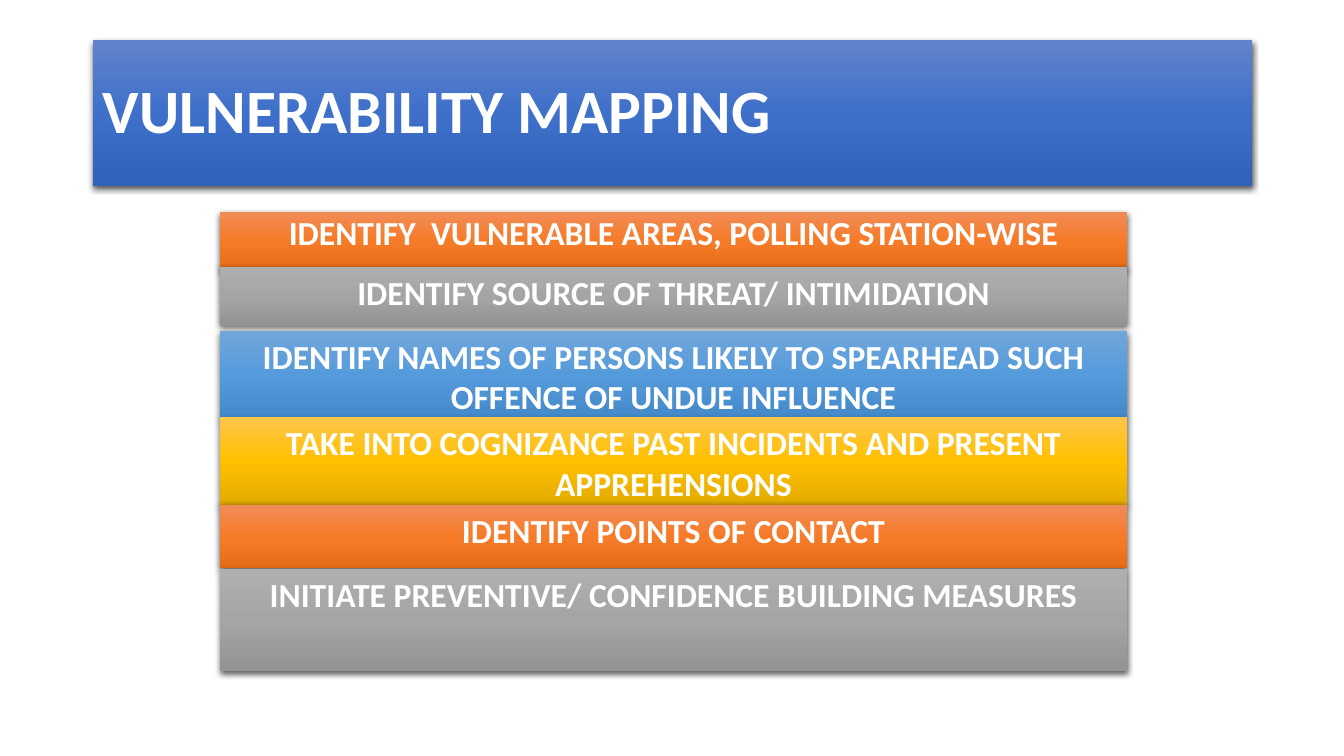
from lxml import etree
from pptx import Presentation
from pptx import util as u
from pptx.dml.color import RGBColor
from pptx.enum import shapes, text
from pptx.oxml.ns import qn

PX = 9144
WHITE = "FFFFFF"
BLUE = ("6183CB", "3E70CA", "3062BB")
ORANGE = ("F18C57", "F67B28", "E56C19")
GREY = ("AFAFAF", "A5A5A5", "939393")
SKY = ("71A6DB", "559BDB", "448ACA")
GOLD = ("FFC64B", "FFC000", "E3AB00")

STEPS = [
    (210, 58, ORANGE, 0.9, "IDENTIFY  VULNERABLE AREAS, POLLING STATION-WISE"),
    (265, 58, GREY, 1, "IDENTIFY SOURCE OF THREAT/ INTIMIDATION"),
    (328, 87, SKY, 1, "IDENTIFY NAMES OF PERSONS LIKELY TO SPEARHEAD SUCH OFFENCE OF UNDUE INFLUENCE"),
    (414, 87, GOLD, 1, "TAKE INTO COGNIZANCE PAST INCIDENTS AND PRESENT APPREHENSIONS"),
    (501, 63, ORANGE, 1, "IDENTIFY POINTS OF CONTACT"),
    (564, 102, GREY, 1, "INITIATE PREVENTIVE/ CONFIDENCE BUILDING MEASURES"),
]


def colour(value):
    """Turn a hex string into a colour."""
    return RGBColor.from_string(value)


def add_child(parent, tag, **attributes):
    """Append a drawing element with the given attributes."""
    child = etree.SubElement(parent, qn(tag))
    for name, value in attributes.items():
        child.set(name, str(value))
    return child


def paint(shape, shades):
    """Fill a shape from top to bottom and give it a soft drop shadow."""
    shape.fill.gradient()
    shape.fill.gradient_angle = 270
    stops = shape.element.spPr.find(".//" + qn("a:gsLst"))
    for stop in list(stops):
        stops.remove(stop)
    for position, shade in zip((0, 50000, 100000), shades):
        add_child(add_child(stops, "a:gs", pos=position), "a:srgbClr", val=shade)
    shape.line.fill.background()
    shape.shadow.inherit = False
    effects = shape.element.spPr.find(qn("a:effectLst"))
    shadow = add_child(effects, "a:outerShdw", blurRad=u.Pt(4.5), dist=u.Pt(1.5),
                       dir=5400000, algn="ctr", rotWithShape=0)
    add_child(add_child(shadow, "a:srgbClr", val="000000"), "a:alpha", val=63000)


def write(shape, words, size, align, anchor, spacing):
    """Put bold white text into a shape."""
    frame = shape.text_frame
    frame.text = words
    frame.word_wrap = True
    frame.auto_size = text.MSO_AUTO_SIZE.NONE
    frame.vertical_anchor = anchor
    para = frame.paragraphs[0]
    para.alignment = align
    para.line_spacing = spacing
    font = para.runs[0].font
    font.name, font.size, font.bold = "Calibri", u.Pt(size), True
    font.color.rgb = colour(WHITE)


def place_title(page, left, top, width, height):
    """Format the title placeholder as a blue banner."""
    title = page.shapes.title
    title.left, title.top = left * PX, top * PX
    title.width, title.height = width * PX, height * PX
    paint(title, BLUE)
    write(title, "VULNERABILITY MAPPING", 44, text.PP_ALIGN.LEFT,
          text.MSO_ANCHOR.MIDDLE, 0.9)


def place_steps(page, left, width):
    """Stack the coloured step bars in one column."""
    for top, height, shades, spacing, words in STEPS:
        bar = page.shapes.add_shape(shapes.MSO_SHAPE.RECTANGLE, left * PX, top * PX,
                                    width * PX, height * PX)
        paint(bar, shades)
        write(bar, words, 24, text.PP_ALIGN.CENTER, text.MSO_ANCHOR.TOP, spacing)


def main():
    """Build and save the slide."""
    deck = Presentation()
    deck.slide_width, deck.slide_height = 1333 * PX, 750 * PX
    page = deck.slides.add_slide(deck.slide_layouts[5])
    place_title(page, 92, 40, 1150, 145)
    place_steps(page, 218, 900)
    deck.save("out.pptx")


if __name__ == "__main__":
    main()
